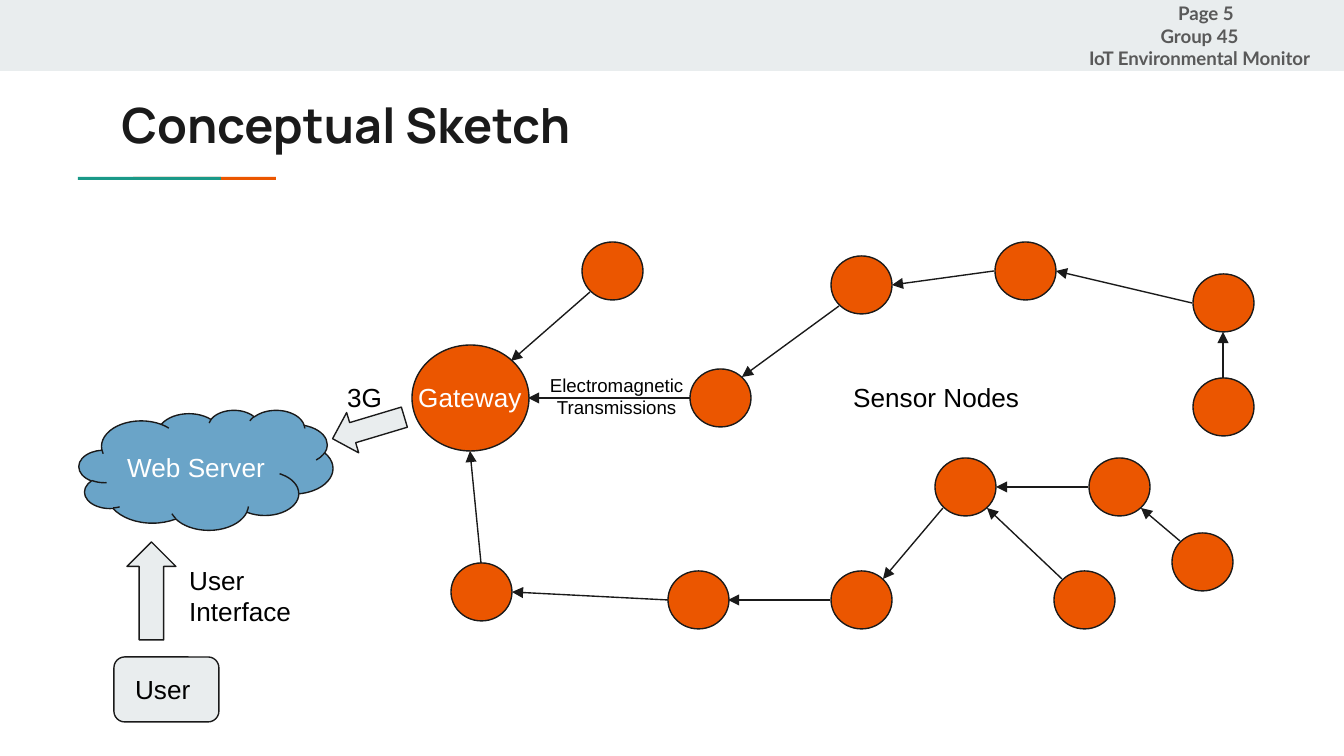
from math import cos, radians, sin

from lxml import etree
from pptx import Presentation
from pptx import util as u
from pptx.dml.color import RGBColor
from pptx.enum import shapes, text
from pptx.oxml.ns import qn

SCALE = 914400 / 134.4
KIND = shapes.MSO_SHAPE
LEFT, MID = text.PP_ALIGN.LEFT, text.PP_ALIGN.CENTER
INK, ORANGE, PALE = "1A1A1A", "EB5600", "E9EDEE"


def px(n):
    return u.Emu(round(n * SCALE))


def tint(code):
    return RGBColor.from_string(code)


def write(frame, lines, size=14, font="Arial", color="000000", bold=False,
          align=LEFT, anchor=text.MSO_ANCHOR.TOP):
    frame.word_wrap = True
    frame.vertical_anchor = anchor
    frame.margin_left = frame.margin_right = u.Inches(0.1)
    frame.margin_top = frame.margin_bottom = u.Inches(0.1)
    for i, line in enumerate(lines.split("\n")):
        para = frame.add_paragraph() if i else frame.paragraphs[0]
        para.alignment = align
        run = para.add_run()
        run.text = line
        run.font.size = u.Pt(size)
        run.font.name = font
        run.font.bold = bold
        run.font.color.rgb = tint(color)


class Sketch:
    ink = INK
    width = u.Pt(0.75)

    def __init__(self, slide):
        self.slide = slide

    def title(self, box, words, **style):
        head = self.slide.shapes.title
        head.left, head.top, head.width, head.height = map(px, box)
        write(head.text_frame, words, **style)
        head.text_frame.paragraphs[0].line_spacing = 1.0

    def shape(self, kind, box, fill, edge=True, turn=0):
        item = self.slide.shapes.add_shape(kind, *map(px, box))
        item.shadow.inherit = False
        item.fill.solid()
        item.fill.fore_color.rgb = tint(fill)
        if edge:
            item.line.color.rgb = tint(self.ink)
            item.line.width = self.width
        else:
            item.line.fill.background()
        item.rotation = turn
        return item

    def node(self, x, y, w, h):
        return self.shape(KIND.OVAL, (x - w // 2, y - h // 2, w, h), ORANGE)

    def label(self, box, words, **style):
        item = self.slide.shapes.add_textbox(*map(px, box))
        write(item.text_frame, words, **style)
        return item

    def arrow(self, start, end):
        line = self.slide.shapes.add_connector(
            shapes.MSO_CONNECTOR.STRAIGHT, *map(px, start + end))
        line.line.color.rgb = tint(self.ink)
        line.line.width = self.width
        tip = etree.SubElement(line.line._get_or_add_ln(), qn("a:tailEnd"))
        tip.set("type", "triangle")
        etree.SubElement(line._element.spPr, qn("a:effectLst"))


def rim(node, angle):
    x, y, w, h = node
    turn = radians(angle)
    return round(x + w / 2 * cos(turn)), round(y + h / 2 * sin(turn))


def main():
    deck = Presentation()
    deck.slide_width, deck.slide_height = px(1344), px(756)
    art = Sketch(deck.slides.add_slide(deck.slide_layouts[5]))

    art.shape(KIND.RECTANGLE, (0, 0, 1344, 71), PALE, edge=False)
    for x, fill in ((133, ORANGE), (78, "1A9988")):
        art.shape(KIND.RECTANGLE, (x, 177, 143, 3), fill, edge=False)
    art.title((108, 82, 1130, 79), "Conceptual Sketch",
              size=26, font="Manrope", color=INK, bold=True)

    spots = {
        "high": (1025, 271), "right": (1119, 487), "hub": (965, 487),
        "mid": (861, 285), "leaf": (1084, 600), "turn": (861, 600),
        "near": (720, 398), "far": (1223, 303), "edge": (1202, 562),
        "end": (1223, 407), "low": (698, 600), "top": (612, 271),
        "base": (481, 592),
    }
    nodes = {name: (x, y, 61, 58) for name, (x, y) in spots.items()}
    nodes["gate"] = (470, 398, 117, 106)
    for node in nodes.values():
        art.node(*node)

    cloud = art.shape(KIND.CLOUD, (79, 410, 254, 120), "6AA4C8")
    write(cloud.text_frame, "Web Server", color="FFFFFF",
          anchor=text.MSO_ANCHOR.MIDDLE)

    links = (
        ("top", 135, "gate"), ("near", 180, "gate"), ("base", 270, "gate"),
        ("low", 180, "base"), ("turn", 180, "low"), ("hub", 135, "turn"),
        ("right", 180, "hub"), ("leaf", 225, "hub"), ("edge", 225, "right"),
        ("end", 270, "far"), ("far", 180, "high"), ("high", 180, "mid"),
        ("mid", 135, "near"),
    )
    for start, angle, end in links:
        art.arrow(rim(nodes[start], angle), rim(nodes[end], angle + 180))

    art.shape(KIND.LEFT_ARROW, (331, 407, 75, 42), PALE, turn=343.3)
    art.shape(KIND.UP_ARROW, (127, 542, 49, 98), PALE)
    user = art.shape(KIND.FLOWCHART_ALTERNATE_PROCESS,
                     (114, 657, 105, 65), PALE)
    write(user.text_frame, "User ", align=MID, anchor=text.MSO_ANCHOR.MIDDLE)

    art.label((405, 368, 134, 48), "Gateway", color="FFFFFF")
    art.label((176, 551, 156, 89), "User Interface")
    art.label((334, 368, 98, 58), "3G")
    art.label((528, 360, 177, 106), "Electromagnetic Transmissions",
              size=10, align=MID)
    art.label((840, 368, 200, 65), "Sensor Nodes")
    note = art.label((1066, 7, 267, 58),
                     "Page 5\nGroup 45\nIoT Environmental Monitor",
                     size=10, font="Lato", color="595959", bold=True,
                     align=MID, anchor=text.MSO_ANCHOR.MIDDLE)
    page = note.text_frame.paragraphs[0]
    page.alignment = LEFT
    page._p.get_or_add_pPr().set("marL", str(px(99)))

    deck.save("out.pptx")


if __name__ == "__main__":
    main()
